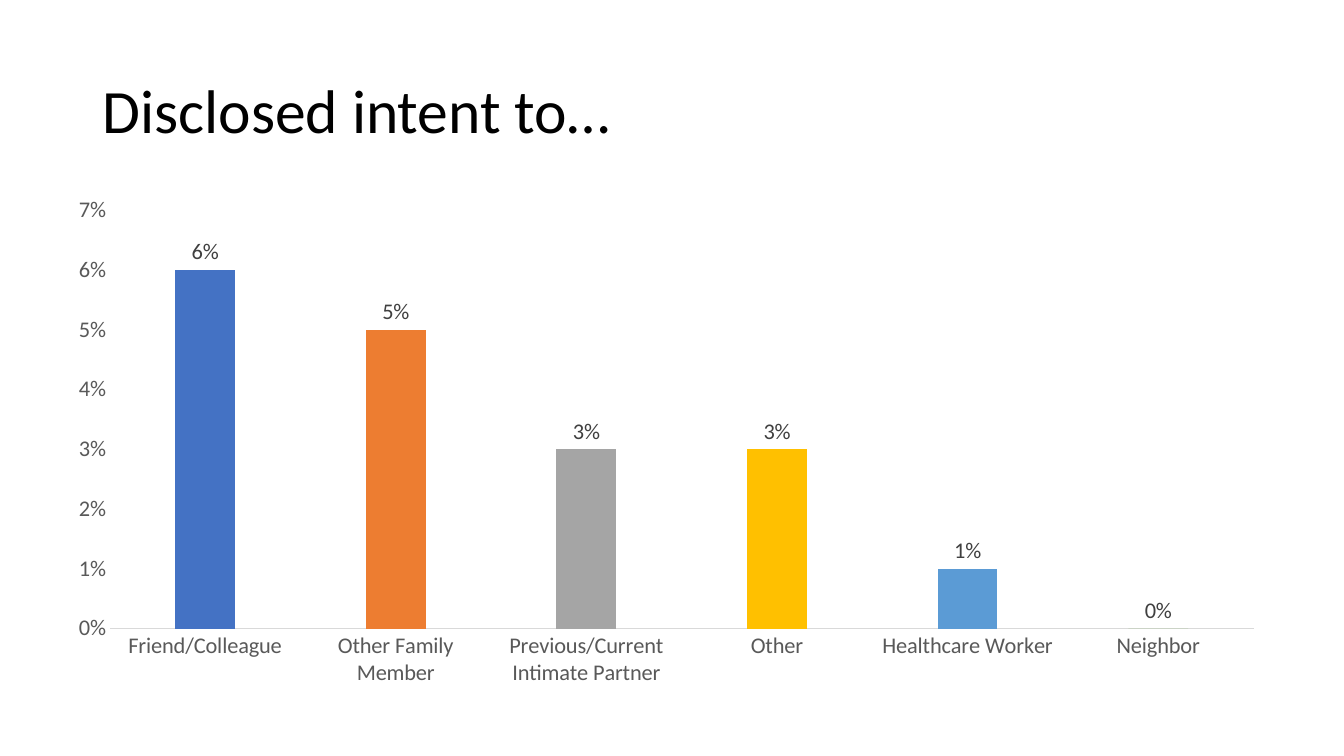
from pptx import Presentation
from pptx.chart.data import CategoryChartData
from pptx.dml.color import RGBColor
from pptx.enum.chart import XL_CHART_TYPE, XL_LABEL_POSITION, XL_TICK_MARK
from pptx.enum.text import MSO_ANCHOR, MSO_AUTO_SIZE, PP_ALIGN
from pptx.util import Pt

COLUMNS = XL_CHART_TYPE.COLUMN_CLUSTERED
OUTSIDE_END = XL_LABEL_POSITION.OUTSIDE_END
NO_TICK = XL_TICK_MARK.NONE
MIDDLE = MSO_ANCHOR.MIDDLE
NO_AUTOFIT = MSO_AUTO_SIZE.NONE
LEFT = PP_ALIGN.LEFT

TITLE_ONLY = 5
FONT = "Calibri"

# Person told, share of cases, column colour
DISCLOSURES = [
    ("Friend/Colleague", 0.06, "4472C4"),
    ("Other Family Member", 0.05, "ED7D31"),
    ("Previous/Current Intimate Partner", 0.03, "A5A5A5"),
    ("Other", 0.03, "FFC000"),
    ("Healthcare Worker", 0.01, "5B9BD5"),
    ("Neighbor", 0, "70AD47"),
]


def color(hex_string):
    return RGBColor.from_string(hex_string)


def format_font(font, size, hex_string):
    font.name = FONT
    font.size = Pt(size)
    font.color.rgb = color(hex_string)


def write_text(frame, text, size=16, hex_string="000000", align=LEFT, line_spacing=1.0):
    para = frame.paragraphs[0]
    para.alignment = align
    para.line_spacing = line_spacing
    span = para.add_run()
    span.text = text
    format_font(span.font, size, hex_string)


def place_title(page, text):
    title = page.shapes.title
    title.left, title.top, title.width, title.height = Pt(66), Pt(28.75), Pt(828), Pt(104.4)
    frame = title.text_frame
    frame.word_wrap = True
    frame.auto_size = NO_AUTOFIT
    frame.vertical_anchor = MIDDLE
    write_text(frame, text, size=44, line_spacing=0.9)


def format_axis(axis):
    axis.has_major_gridlines = False
    axis.major_tick_mark = NO_TICK
    axis.minor_tick_mark = NO_TICK
    format_font(axis.tick_labels.font, 16, "595959")


def add_column_chart(page, rows):
    data = CategoryChartData(number_format="0%")
    data.categories = [name for name, share, fill in rows]
    data.add_series("Series 1", [share for name, share, fill in rows])
    chart = page.shapes.add_chart(
        COLUMNS, Pt(38.9), Pt(133.2), Pt(874), Pt(365), data).chart
    chart.has_legend = False
    chart.has_title = False
    format_font(chart.font, 16, "000000")

    # Axes
    format_axis(chart.category_axis)
    category_line = chart.category_axis.format.line
    category_line.color.rgb = color("D9D9D9")
    category_line.width = Pt(0.75)
    value_axis = chart.value_axis
    format_axis(value_axis)
    value_axis.format.line.fill.background()
    value_axis.minimum_scale = 0
    value_axis.maximum_scale = 0.07
    value_axis.major_unit = 0.01
    value_axis.tick_labels.number_format = "0%"
    value_axis.tick_labels.number_format_is_linked = False

    # Columns
    plot = chart.plots[0]
    plot.gap_width = 219
    plot.overlap = -27
    plot.vary_by_categories = False
    series = plot.series[0]
    for index, (name, share, fill) in enumerate(rows):
        column_fill = series.points[index].format.fill
        column_fill.solid()
        column_fill.fore_color.rgb = color(fill)

    # Value labels
    labels = series.data_labels
    labels.show_value = True
    labels.position = OUTSIDE_END
    labels.number_format = "0%"
    labels.number_format_is_linked = False
    format_font(labels.font, 16, "404040")


def main():
    deck = Presentation()
    deck.slide_width, deck.slide_height = Pt(960), Pt(540)
    page = deck.slides.add_slide(deck.slide_layouts[TITLE_ONLY])
    place_title(page, "Disclosed intent to…")
    add_column_chart(page, DISCLOSURES)
    deck.save("out.pptx")


if __name__ == "__main__":
    main()
